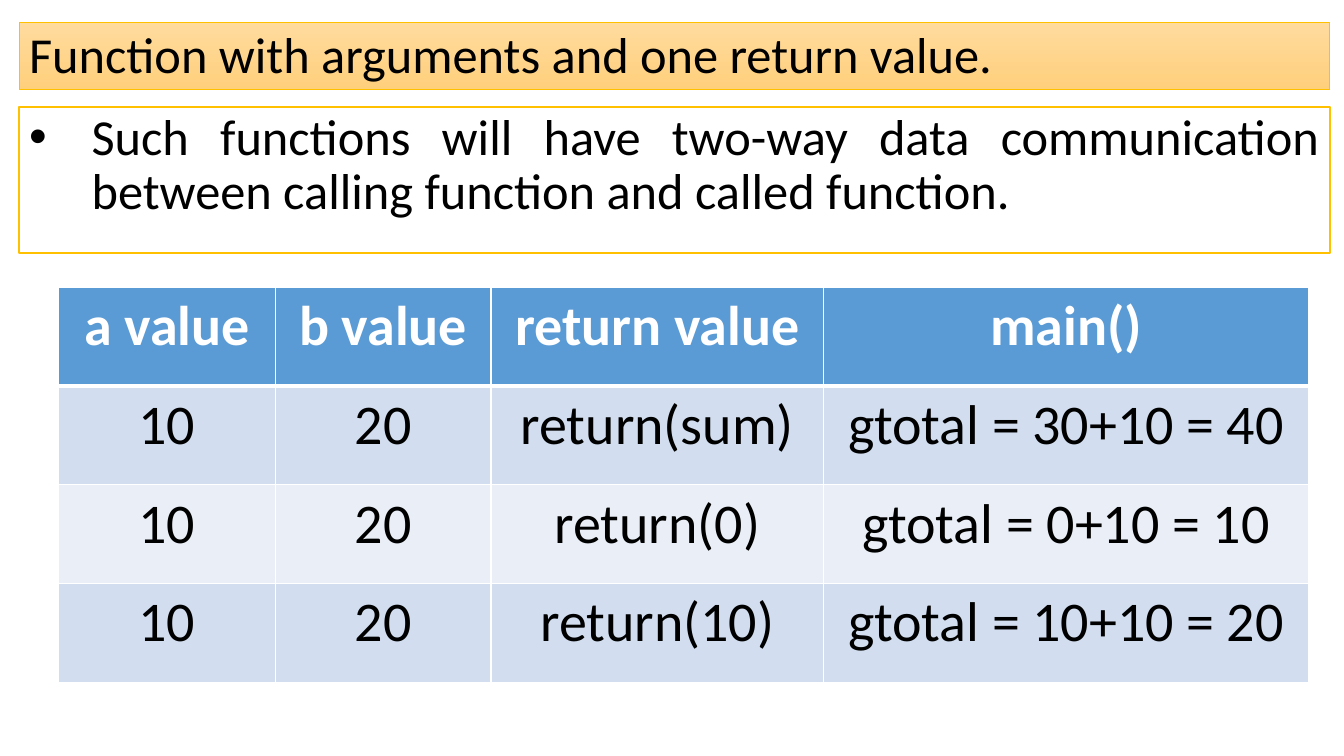
from lxml.etree import SubElement
from pptx import Presentation
from pptx.dml.color import RGBColor
from pptx.enum.shapes import MSO_SHAPE as Shape
from pptx.enum.text import MSO_ANCHOR as Anchor, PP_ALIGN as Align
from pptx.oxml.ns import qn
from pptx.util import Pt

PX = 9144
BLACK = RGBColor(0x00, 0x00, 0x00)
WHITE = RGBColor(0xFF, 0xFF, 0xFF)
GOLD = RGBColor(0xFF, 0xC0, 0x00)
PEACH = RGBColor(0xFF, 0xDB, 0x9E)
APRICOT = RGBColor(0xFF, 0xD0, 0x7C)
HEADER_BLUE = RGBColor(0x5B, 0x9B, 0xD5)
BAND_DARK = RGBColor(0xD2, 0xDE, 0xEF)
BAND_LIGHT = RGBColor(0xEA, 0xEF, 0xF7)

ROWS = [
    ("a value", "b value", "return value", "main()"),
    ("10", "20", "return(sum)", "gtotal = 30+10 = 40"),
    ("10", "20", "return(0)", "gtotal = 0+10 = 10"),
    ("10", "20", "return(10)", "gtotal = 10+10 = 20"),
]


class SlideBuilder:
    font = "Calibri"
    text_size = 36
    table_size = 40

    def __init__(self, page):
        self.page = page

    def set_text(self, frame, text, size, color, align, bold=False):
        frame.text = text
        para = frame.paragraphs[0]
        para.alignment = align
        for span in para.runs:
            span.font.name = self.font
            span.font.size = Pt(size)
            span.font.bold = bold
            span.font.color.rgb = color
        return para

    def panel(self, left, top, width, height, text, line_width, anchor):
        box = self.page.shapes.add_shape(
            Shape.RECTANGLE, left * PX, top * PX, width * PX, height * PX)
        box.shadow.inherit = False
        box.fill.solid()
        box.fill.fore_color.rgb = WHITE
        box.line.color.rgb = GOLD
        box.line.width = Pt(line_width)
        box.text_frame.word_wrap = True
        box.text_frame.vertical_anchor = anchor
        para = self.set_text(box.text_frame, text, self.text_size, BLACK, Align.JUSTIFY)
        para.line_spacing = 0.9
        return box

    def heading(self, left, top, width, height, text):
        box = self.panel(left, top, width, height, text, 0.5, Anchor.BOTTOM)
        box.fill.gradient()
        box.fill.gradient_angle = 270
        for stop, color in zip(box.fill.gradient_stops, (PEACH, APRICOT)):
            stop.color.rgb = color

    def bullet(self, left, top, width, height, text, indent):
        box = self.panel(left, top, width, height, text, 1, Anchor.TOP)
        para = box.text_frame.paragraphs[0]
        para.space_before = Pt(10)
        props = para._p.get_or_add_pPr()
        props.set("marL", str(indent * PX))
        props.set("indent", str(-indent * PX))
        SubElement(props, qn("a:buFont"), typeface="Arial")
        SubElement(props, qn("a:buChar"), char="•")

    def borders(self, cell, top, bottom):
        props = cell._tc.get_or_add_tcPr()
        for side, width in (("L", 1), ("R", 1), ("T", top), ("B", bottom)):
            line = SubElement(props, qn(f"a:ln{side}"), w=str(Pt(width)))
            fill = SubElement(line, qn("a:solidFill"))
            SubElement(fill, qn("a:srgbClr"), val=str(WHITE))

    def table(self, left, top, widths, row_height, rows):
        grid = self.page.shapes.add_table(
            len(rows), len(widths), left * PX, top * PX,
            sum(widths) * PX, len(rows) * row_height * PX).table
        for column, width in zip(grid.columns, widths):
            column.width = width * PX
        for r, texts in enumerate(rows):
            header = r == 0
            band = HEADER_BLUE if header else BAND_DARK if r % 2 else BAND_LIGHT
            for c, text in enumerate(texts):
                cell = grid.cell(r, c)
                self.borders(cell, 3 if r == 1 else 1, 3 if header else 1)
                cell.fill.solid()
                cell.fill.fore_color.rgb = band
                self.set_text(cell.text_frame, text, self.table_size,
                              WHITE if header else BLACK, Align.CENTER, header)


def main():
    deck = Presentation()
    deck.slide_width = 1333 * PX
    deck.slide_height = 750 * PX
    builder = SlideBuilder(deck.slides.add_slide(deck.slide_layouts[6]))
    builder.heading(19, 22, 1300, 67, "Function with arguments and one return value.")
    builder.bullet(19, 106, 1300, 145,
                   "Such functions will have two-way data communication "
                   "between calling function and called function.", 62)
    builder.table(58, 285, (215, 214, 330, 481), 98, ROWS)
    deck.save("out.pptx")


if __name__ == "__main__":
    main()
